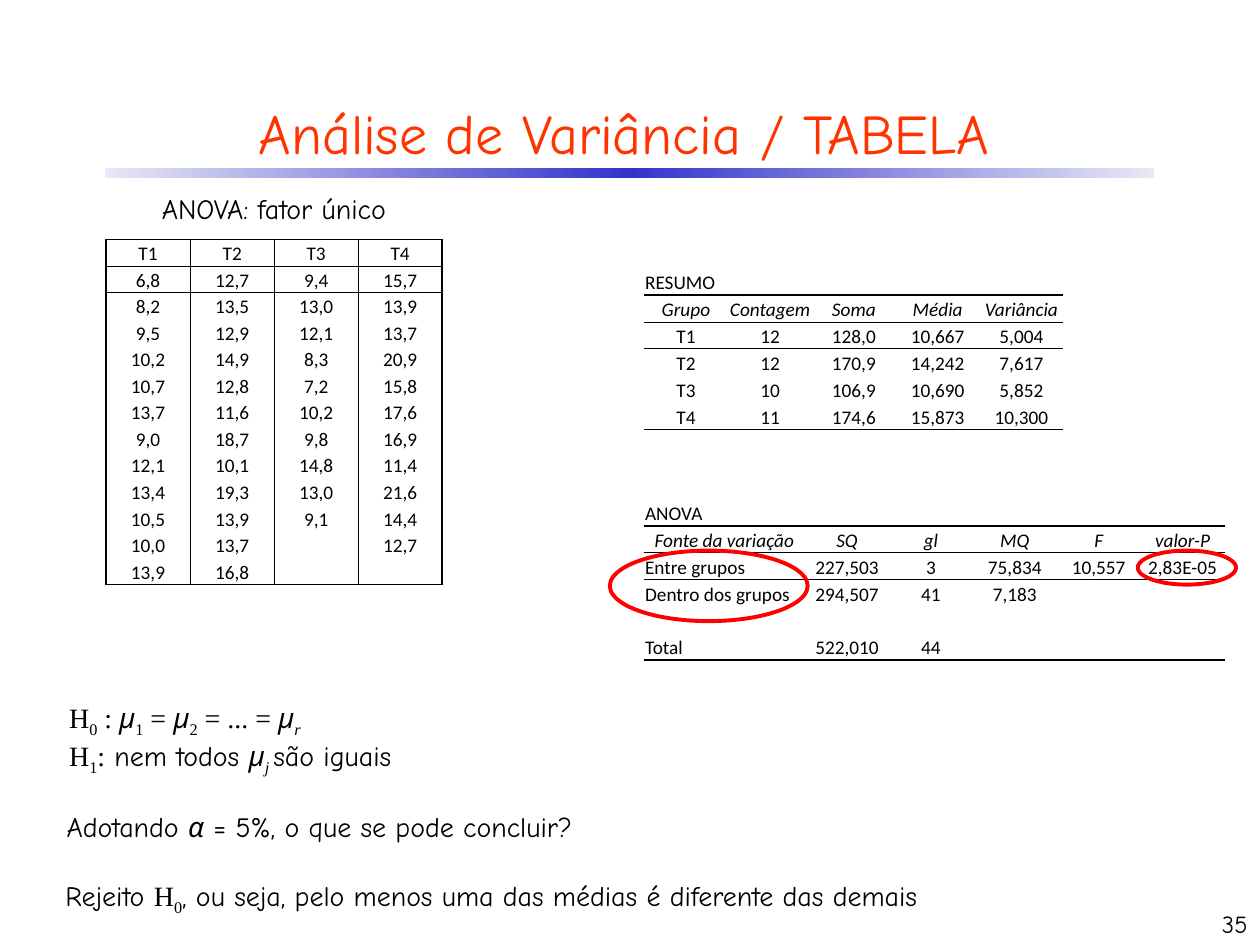
"""Build the one-way analysis of variance slide with its tables and conclusions."""
from copy import deepcopy
from dataclasses import dataclass
from typing import NamedTuple

from lxml.etree import SubElement
from pptx import Presentation
from pptx.dml.color import RGBColor
from pptx.enum.shapes import MSO_SHAPE
from pptx.enum.text import MSO_ANCHOR, PP_ALIGN
from pptx.oxml.ns import qn
from pptx.util import Inches, Pt


@dataclass(frozen=True)
class Theme:
    ink: RGBColor = RGBColor(0, 0, 0)
    paper: RGBColor = RGBColor(0xFF, 0xFF, 0xFF)
    title: RGBColor = RGBColor(0xFF, 0x33, 0x00)
    highlight: RGBColor = RGBColor(0xFF, 0, 0)
    bar_edge: RGBColor = RGBColor(0xE8, 0xE8, 0xF6)
    bar_middle: RGBColor = RGBColor(0x33, 0x33, 0xCC)
    hand: str = "Comic Neue"
    serif: str = "Times New Roman"
    table: str = "Calibri"
    title_size: int = 32
    body_size: int = 16
    number_size: int = 14
    table_size: int = 11
    plain_table: str = "{2D5ABB26-0587-4C30-8999-92F81FD0307C}"


THEME = Theme()


class Box(NamedTuple):
    left: float
    top: float
    width: float
    height: float

    def lengths(self) -> list:
        return [Inches(side) for side in self]


class Part(NamedTuple):
    text: str
    font: str = THEME.hand
    italic: bool = False
    lowered: bool = False


@dataclass(frozen=True)
class TextBlock:
    box: Box
    lines: list
    size: int = THEME.body_size
    color: RGBColor = THEME.ink
    align: PP_ALIGN = PP_ALIGN.LEFT
    anchor: MSO_ANCHOR = MSO_ANCHOR.TOP


@dataclass(frozen=True)
class DataTable:
    box: Box
    rows: list
    header: int = 1
    first_width: float = 0.67
    labels_left: bool = False
    framed: bool = False


def serif(text: str) -> Part:
    return Part(text, THEME.serif)


def lowered(text: str, italic: bool = False) -> Part:
    return Part(text, THEME.serif, italic, True)


MU = Part("μ", italic=True)

TEXTS = [
    TextBlock(Box(0.33, 0.67, 9.25, 0.75), [[Part("Análise de Variância / TABELA")]],
              THEME.title_size, THEME.title, PP_ALIGN.CENTER, MSO_ANCHOR.MIDDLE),
    TextBlock(Box(0.76, 1.47, 2.83, 0.37), [[Part("ANOVA: fator único")]], align=PP_ALIGN.CENTER),
    TextBlock(Box(7.92, 7, 2.08, 0.5), [[Part("35")]], THEME.number_size,
              align=PP_ALIGN.RIGHT, anchor=MSO_ANCHOR.BOTTOM),
    TextBlock(Box(0.45, 5.51, 3.42, 0.75), [
        [serif("H"), lowered("0"), serif(" : "), MU, lowered("1"), serif(" = "), MU,
         lowered("2"), serif(" = ... = "), MU, lowered("r", True)],
        [serif("H"), lowered("1"), serif(":"), Part(" nem todos "), MU,
         lowered("j ", True), Part("são iguais")]]),
    TextBlock(Box(0.43, 6.38, 8.59, 0.37), [
        [Part("Adotando "), Part("α ", italic=True), Part("= 5%, o que se pode concluir?")]]),
    TextBlock(Box(0.42, 6.92, 8.59, 0.37), [
        [Part("Rejeito "), serif("H"), lowered("0"),
         Part(", ou seja, pelo menos uma das médias é diferente das demais")]]),
]

TABLES = [
    DataTable(Box(5.11, 2.13, 3.33, 1.28), [
        ["RESUMO", "", "", "", ""],
        ["Grupo", "Contagem", "Soma", "Média", "Variância"],
        ["T1", "12", "128,0", "10,667", "5,004"],
        ["T2", "12", "170,9", "14,242", "7,617"],
        ["T3", "10", "106,9", "10,690", "5,852"],
        ["T4", "11", "174,6", "15,873", "10,300"]]),
    DataTable(Box(5.11, 3.96, 4.61, 1.28), [
        ["ANOVA", "", "", "", "", ""],
        ["Fonte da variação", "SQ", "gl", "MQ", "F", "valor-P"],
        ["Entre grupos", "227,503", "3", "75,834", "10,557", "2,83E-05"],
        ["Dentro dos grupos", "294,507", "41", "7,183", "", ""],
        ["", "", "", "", "", ""],
        ["Total", "522,010", "44", "", "", ""]], first_width=1.28, labels_left=True),
    DataTable(Box(0.84, 1.9, 2.67, 2.74), [
        ["T1", "T2", "T3", "T4"],
        ["6,8", "12,7", "9,4", "15,7"],
        ["8,2", "13,5", "13,0", "13,9"],
        ["9,5", "12,9", "12,1", "13,7"],
        ["10,2", "14,9", "8,3", "20,9"],
        ["10,7", "12,8", "7,2", "15,8"],
        ["13,7", "11,6", "10,2", "17,6"],
        ["9,0", "18,7", "9,8", "16,9"],
        ["12,1", "10,1", "14,8", "11,4"],
        ["13,4", "19,3", "13,0", "21,6"],
        ["10,5", "13,9", "9,1", "14,4"],
        ["10,0", "13,7", "", "12,7"],
        ["13,9", "16,8", "", ""]], header=0, framed=True),
]

HIGHLIGHTS = [Box(9.03, 4.37, 0.78, 0.27), Box(4.84, 4.37, 1.57, 0.56)]


def draw_bar(slide, box: Box) -> None:
    bar = slide.shapes.add_shape(MSO_SHAPE.RECTANGLE, *box.lengths())
    bar.shadow.inherit = False
    bar.line.fill.background()
    bar.fill.gradient()
    bar.fill.gradient_angle = 0
    first, last = bar.fill.gradient_stops
    first.color.rgb, first.position = THEME.bar_edge, 0
    last.color.rgb, last.position = THEME.bar_middle, 0.5
    stops = bar._element.spPr.find(qn("a:gradFill")).find(qn("a:gsLst"))
    closing = deepcopy(stops[0])
    closing.set("pos", "100000")
    stops.append(closing)


def draw_text(slide, block: TextBlock) -> None:
    frame = slide.shapes.add_textbox(*block.box.lengths()).text_frame
    frame.word_wrap = True
    frame.vertical_anchor = block.anchor
    for index, line in enumerate(block.lines):
        paragraph = frame.add_paragraph() if index else frame.paragraphs[0]
        paragraph.alignment = block.align
        for part in line:
            run = paragraph.add_run()
            run.text = part.text
            run.font.name, run.font.size = part.font, Pt(block.size)
            run.font.italic, run.font.color.rgb = part.italic, block.color
            if part.lowered:
                run.font._element.set("baseline", "-25000")


def set_borders(cell, widths: dict) -> None:
    properties = cell._tc.get_or_add_tcPr()
    drawn = [(side, width) for side, width in widths.items() if width]
    for index, (side, width) in enumerate(drawn):
        edge = SubElement(properties, qn(f"a:ln{side}"), w=str(Pt(width)))
        SubElement(SubElement(edge, qn("a:solidFill")), qn("a:srgbClr"), val=str(THEME.ink))
        properties.insert(index, edge)


def fill_cell(cell, text: str, align: PP_ALIGN, italic: bool) -> None:
    cell.margin_left = cell.margin_right = cell.margin_top = Inches(0.01)
    cell.margin_bottom = 0
    cell.vertical_anchor = MSO_ANCHOR.BOTTOM
    paragraph = cell.text_frame.paragraphs[0]
    paragraph.alignment = align
    if not text:
        SubElement(paragraph._p, qn("a:endParaRPr"), sz=str(THEME.table_size * 100))
        return
    paragraph.text = text
    font = paragraph.runs[0].font
    font.name, font.size = THEME.table, Pt(THEME.table_size)
    font.italic, font.color.rgb = italic, THEME.ink


def draw_table(slide, data: DataTable) -> None:
    count, span = len(data.rows), len(data.rows[0])
    table = slide.shapes.add_table(count, span, *data.box.lengths()).table
    table.first_row = table.horz_banding = False
    table._tbl.tblPr.find(qn("a:tableStyleId")).text = THEME.plain_table
    other_width = (data.box.width - data.first_width) / (span - 1)
    for index, column in enumerate(table.columns):
        column.width = Inches(other_width if index else data.first_width)
    across = {data.header: 1, data.header + 1: 0.5, count: 1}
    down = {edge: 1 if edge in (0, span) else 0.5 for edge in range(span + 1)} if data.framed else {}
    for r, values in enumerate(data.rows):
        table.rows[r].height = Inches(data.box.height / count)
        for c, text in enumerate(values):
            cell = table.cell(r, c)
            at_left = r < data.header or (data.labels_left and c == 0 and r > data.header)
            fill_cell(cell, text, PP_ALIGN.LEFT if at_left else PP_ALIGN.CENTER,
                      r == data.header and not data.framed)
            if data.framed:
                cell.fill.solid()
                cell.fill.fore_color.rgb = THEME.paper
            else:
                cell.fill.background()
            set_borders(cell, {"L": down.get(c), "R": down.get(c + 1),
                               "T": across.get(r), "B": across.get(r + 1)})


def draw_highlight(slide, box: Box) -> None:
    ring = slide.shapes.add_shape(MSO_SHAPE.OVAL, *box.lengths())
    ring.shadow.inherit = False
    ring.fill.background()
    ring.line.color.rgb, ring.line.width = THEME.highlight, Pt(2.25)


def main() -> None:
    deck = Presentation()
    deck.slide_width, deck.slide_height = Inches(10), Inches(7.5)
    slide = deck.slides.add_slide(deck.slide_layouts[6])
    draw_bar(slide, Box(0.83, 1.33, 8.33, 0.08))
    for data in TABLES:
        draw_table(slide, data)
    for block in TEXTS:
        draw_text(slide, block)
    for box in HIGHLIGHTS:
        draw_highlight(slide, box)
    deck.save("out.pptx")


if __name__ == "__main__":
    main()
